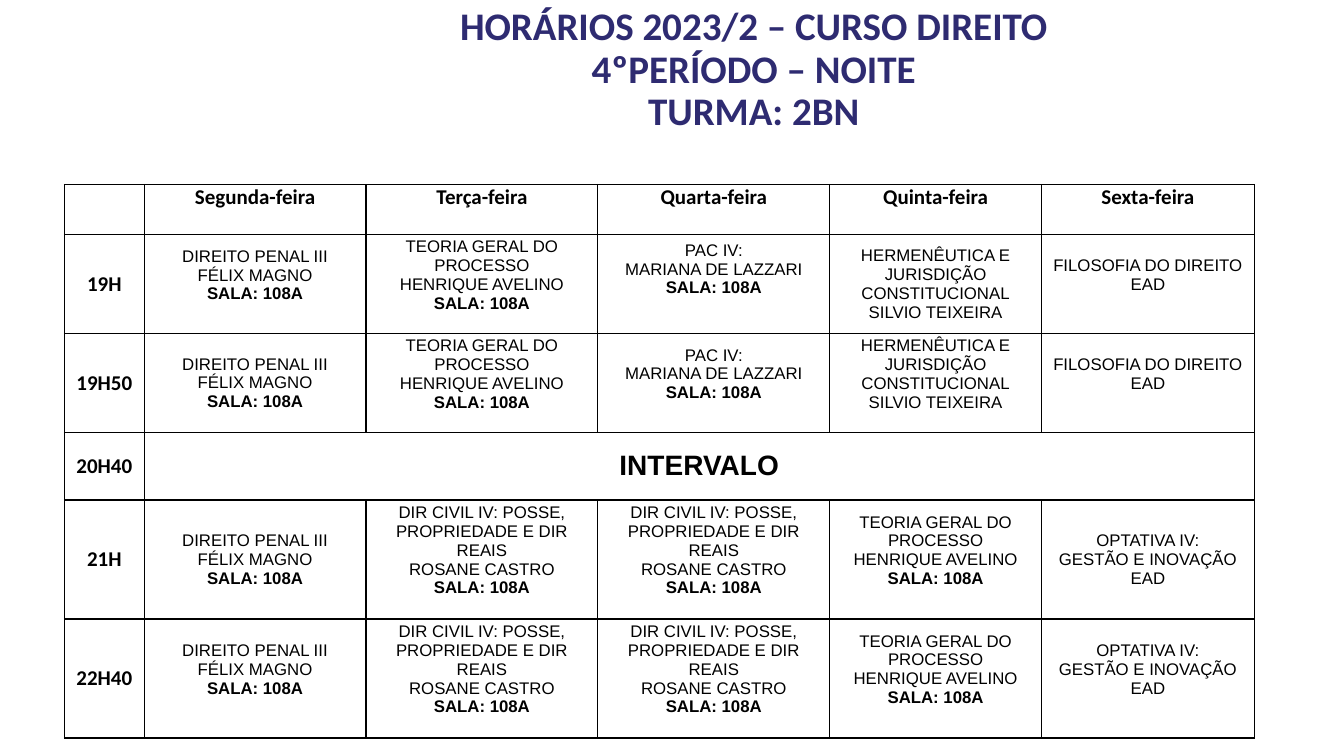
from lxml.etree import SubElement
from pptx import Presentation
from pptx.dml.color import RGBColor
from pptx.enum.text import MSO_ANCHOR as Anchor, PP_ALIGN as Align
from pptx.oxml.ns import qn
from pptx.util import Inches, Pt

NAVY = RGBColor(0x2E, 0x2B, 0x71)
BLACK = RGBColor(0, 0, 0)
WHITE = RGBColor(0xFF, 0xFF, 0xFF)

TITLE_FONT = {"name": "Calibri", "size": Pt(27.9), "bold": True, "color": NAVY}
LABEL_FONT = {"name": "Calibri", "size": Pt(15), "bold": True, "color": BLACK}
BREAK_FONT = {"name": "Arial", "size": Pt(20), "bold": True, "color": BLACK}
CLASS_FONT = {"name": "Arial", "size": Pt(12), "bold": False, "color": BLACK}

TITLE_LINES = ["HORÁRIOS 2023/2 – CURSO DIREITO", "4ºPERÍODO – NOITE", "TURMA: 2BN"]
DAYS = ["Segunda-feira", "Terça-feira", "Quarta-feira", "Quinta-feira", "Sexta-feira"]
ROOM = "SALA: 108A"
PENAL = ["DIREITO PENAL III", "FÉLIX MAGNO", ROOM]
PROCESSO = ["TEORIA GERAL DO PROCESSO", "HENRIQUE AVELINO", ROOM]
PAC = ["PAC IV:", "MARIANA DE LAZZARI", ROOM]
HERMENEUTICA = ["HERMENÊUTICA E JURISDIÇÃO CONSTITUCIONAL", "SILVIO TEIXEIRA"]
FILOSOFIA = ["FILOSOFIA DO DIREITO", "EAD"]
CIVIL = ["DIR CIVIL IV: POSSE, PROPRIEDADE E DIR REAIS", "ROSANE CASTRO", ROOM]
OPTATIVA = ["OPTATIVA IV:", "GESTÃO E INOVAÇÃO", "EAD"]

EARLY = [PENAL, PROCESSO, PAC, HERMENEUTICA, FILOSOFIA]
LATE = [PENAL, CIVIL, CIVIL, PROCESSO, OPTATIVA]
# Time, row height, classes, and space kept under each class in text lines
SCHEDULE = [
    ("19H", 0.93, EARLY, [1, 1, 1.65, 0, 1]),
    ("19H50", 0.93, EARLY, [0, 1, 1, 1, 1]),
    ("20H40", 0.67, None, None),
    ("21H", 1.12, LATE, [0, 1, 1, 1, 0]),
    ("22H40", 1.12, LATE, [1, 1, 1, 1, 1]),
]
HEADER_HEIGHT = 0.5
COLUMN_WIDTHS = [0.79, 2.2, 2.3, 2.3, 2.1, 2.11]
CLASS_LINE = 0.18


def set_font(font, style):
    for name, value in style.items():
        if name == "color":
            font.color.rgb = value
        else:
            setattr(font, name, value)


def write_lines(text_frame, lines, style, line_spacing=None):
    """Write one centred paragraph per line; room lines are bold."""
    for index, line in enumerate(lines):
        paragraph = text_frame.add_paragraph() if index else text_frame.paragraphs[0]
        paragraph.alignment = Align.CENTER
        paragraph.line_spacing = line_spacing
        run = paragraph.add_run()
        run.text = line
        set_font(run.font, style)
        if line == ROOM:
            run.font.bold = True


def format_cell(cell):
    """Give the cell a white fill, narrow margins and black borders."""
    cell.fill.solid()
    cell.fill.fore_color.rgb = WHITE
    margins = {"left": 0.05, "right": 0.05, "top": 0, "bottom": 0}
    for side, margin in margins.items():
        setattr(cell, f"margin_{side}", Inches(margin))
    properties = cell._tc.get_or_add_tcPr()
    for index, side in enumerate("LRTB"):
        border = SubElement(properties, qn(f"a:ln{side}"), w=str(Pt(1)))
        fill = SubElement(border, qn("a:solidFill"))
        SubElement(fill, qn("a:srgbClr"), val=str(BLACK))
        properties.insert(index, border)


def fill_cell(cell, lines, style, anchor=Anchor.MIDDLE, lines_below=0):
    write_lines(cell.text_frame, lines, style)
    cell.vertical_anchor = anchor
    cell.margin_bottom = Inches(lines_below * CLASS_LINE)


def add_title(slide, left, top, width, height):
    box = slide.shapes.add_textbox(left, top, width, height)
    text_frame = box.text_frame
    text_frame.word_wrap = True
    text_frame.vertical_anchor = Anchor.MIDDLE
    text_frame.margin_bottom = Inches(0.52)
    write_lines(text_frame, TITLE_LINES, TITLE_FONT, line_spacing=0.9)


def add_timetable(slide, left, top):
    heights = [HEADER_HEIGHT] + [height for _, height, _, _ in SCHEDULE]
    frame = slide.shapes.add_table(len(heights), len(COLUMN_WIDTHS), left, top,
                                   Inches(sum(COLUMN_WIDTHS)), Inches(sum(heights)))
    table = frame.table
    table.first_row = table.horz_banding = False
    for column, width in zip(table.columns, COLUMN_WIDTHS):
        column.width = Inches(width)
    for row, height in zip(table.rows, heights):
        row.height = Inches(height)
    for cell in table.iter_cells():
        format_cell(cell)

    for column, day in enumerate(DAYS, 1):
        fill_cell(table.cell(0, column), [day], LABEL_FONT, Anchor.TOP)
    for row, (time, _, classes, spaces) in enumerate(SCHEDULE, 1):
        fill_cell(table.cell(row, 0), [time], LABEL_FONT)
        if classes is None:
            table.cell(row, 1).merge(table.cell(row, len(DAYS)))
            fill_cell(table.cell(row, 1), ["INTERVALO"], BREAK_FONT)
            continue
        for column, (lines, space) in enumerate(zip(classes, spaces), 1):
            fill_cell(table.cell(row, column), lines, CLASS_FONT, lines_below=space)


def main():
    presentation = Presentation()
    presentation.slide_width = Inches(13.33)
    presentation.slide_height = Inches(7.5)
    slide = presentation.slides.add_slide(presentation.slide_layouts[6])
    add_title(slide, Inches(3.28), Inches(0.21), Inches(8.39), Inches(1.45))
    add_timetable(slide, Inches(0.64), Inches(1.83))
    presentation.save("out.pptx")


if __name__ == "__main__":
    main()
